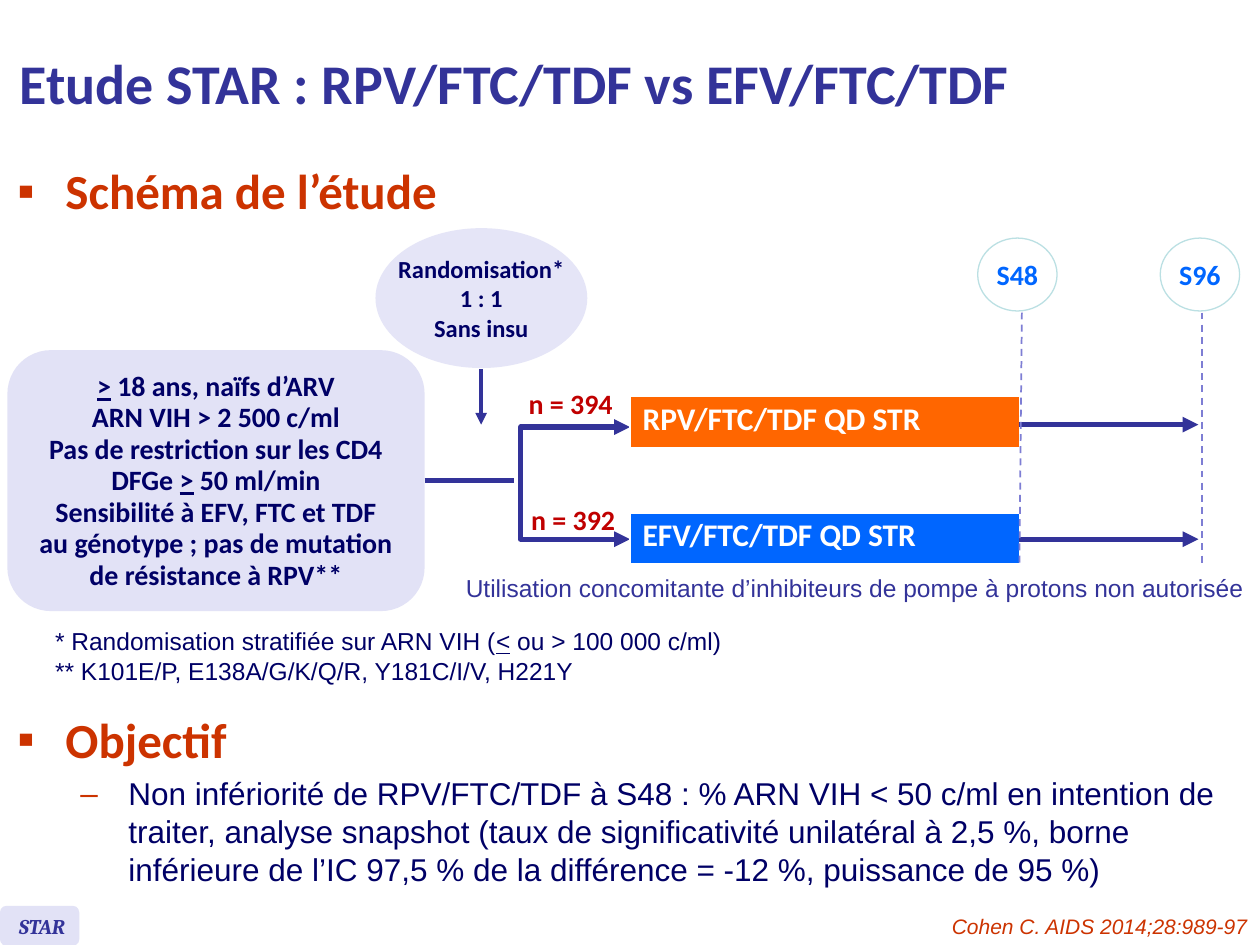
from lxml import etree
from pptx import Presentation
from pptx.dml.color import RGBColor
from pptx.enum.dml import MSO_LINE
from pptx.enum.shapes import MSO_CONNECTOR, MSO_SHAPE
from pptx.enum.text import MSO_ANCHOR, PP_ALIGN
from pptx.oxml.ns import qn
from pptx.util import Cm, Pt

INDIGO = RGBColor(0x33, 0x33, 0x99)
NAVY = RGBColor(0x00, 0x00, 0x66)
RUST = RGBColor(0xCC, 0x33, 0x00)
RED = RGBColor(0xC0, 0x00, 0x00)
ORANGE = RGBColor(0xFF, 0x66, 0x00)
BLUE = RGBColor(0x00, 0x66, 0xFF)
LAVENDER = RGBColor(0xE2, 0xE2, 0xF6)
PALE = RGBColor(0xE5, 0xE5, 0xF7)
VIOLET = RGBColor(0x7E, 0x7E, 0xD4)
AQUA = RGBColor(0xBB, 0xE0, 0xE3)
WHITE = RGBColor(0xFF, 0xFF, 0xFF)

TITLE = "Etude STAR : RPV/FTC/TDF vs EFV/FTC/TDF"
SCHEMA = "Schéma de l’étude"
GOAL = "Objectif"
GOAL_DETAIL = (
    "Non infériorité de RPV/FTC/TDF à S48 : % ARN VIH < 50 c/ml en intention de "
    "traiter, analyse snapshot (taux de significativité unilatéral à 2,5 %, borne "
    "inférieure de l’IC 97,5 % de la différence = -12 %, puissance de 95 %)"
)
RANDOMISATION = ["Randomisation*", "1 : 1", "Sans insu"]
# Text between two vertical bars is underlined.
CRITERIA = [
    "|>| 18 ans, naïfs d’ARV",
    "ARN VIH > 2 500 c/ml",
    "Pas de restriction sur les CD4",
    "DFGe |>| 50 ml/min",
    "Sensibilité à EFV, FTC et TDF",
    "au génotype ; pas de mutation",
    "de résistance à RPV**",
]
FOOTNOTES = [
    "* Randomisation stratifiée sur ARN VIH (|<| ou > 100 000 c/ml)",
    "** K101E/P, E138A/G/K/Q/R, Y181C/I/V, H221Y",
]
RESTRICTION = "Utilisation concomitante d’inhibiteurs de pompe à protons non autorisée"
CITATION = "Cohen C. AIDS 2014;28:989-97"
ARMS = [
    ("RPV/FTC/TDF QD STR", ORANGE, 7.98, 1.04, 0.8, "n = 394", 10.36, 7.67, 8.56),
    ("EFV/FTC/TDF QD STR", BLUE, 10.34, 1.02, 0.7, "n = 392", 10.41, 10.01, 10.87),
]
VISITS = [("S48", 19.71, 20.6, 20.55, 11.35), ("S96", 23.39, 24.23, 24.23, 11.43)]
ARM_LEFT, ARM_WIDTH, FORK_LEFT, ARROW_END = 12.7, 7.85, 10.5, 24.16


def style(para, size, color, face="Calibri", bold=False, italic=False):
    font = para.font
    font.size, font.name, font.bold, font.italic = Pt(size), face, bold, italic
    font.color.rgb = color


def write(frame, lines, size, color, align=PP_ALIGN.LEFT, anchor=MSO_ANCHOR.TOP,
          wrap=True, spacing=None, **look):
    frame.word_wrap = wrap
    frame.vertical_anchor = anchor
    for index, line in enumerate(lines):
        para = frame.add_paragraph() if index else frame.paragraphs[0]
        para.alignment = align
        if spacing:
            para.line_spacing = spacing
        for part, text in enumerate(line.split("|")):
            if text:
                span = para.add_run()
                span.text = text
                if part % 2:
                    span.font.underline = True
        style(para, size, color, **look)


def add_text(shapes, place, lines, size, color, **options):
    box = shapes.add_textbox(*map(Cm, place))
    write(box.text_frame, lines, size, color, **options)
    return box


def add_panel(shapes, kind, place, fill, outline=None):
    panel = shapes.add_shape(kind, *map(Cm, place))
    panel.shadow.inherit = False
    panel.fill.solid()
    panel.fill.fore_color.rgb = fill
    if outline:
        panel.line.color.rgb = outline
        panel.line.width = Pt(0.75)
    else:
        panel.line.fill.background()
    return panel


def add_arrowheads(line, *ends):
    for end in ends:
        etree.SubElement(line.line._get_or_add_ln(), qn(f"a:{end}"), type="triangle")


def add_line(shapes, start, end, width, color=INDIGO):
    line = shapes.add_connector(MSO_CONNECTOR.STRAIGHT, *map(Cm, (*start, *end)))
    line.line.color.rgb = color
    line.line.width = Pt(width)
    etree.SubElement(line._element.spPr, qn("a:effectLst"))
    return line


def add_bullet(para, mark, left):
    props = para._p.get_or_add_pPr()
    props.set("marL", str(Cm(left)))
    props.set("indent", str(-Cm(0.97)))
    color = etree.SubElement(props, qn("a:buClr"))
    etree.SubElement(color, qn("a:srgbClr"), val=str(RUST))
    etree.SubElement(props, qn("a:buFont"), typeface="Arial")
    etree.SubElement(props, qn("a:buChar"), char=mark)


def add_outline(shapes, place, heading, detail=None):
    frame = shapes.add_textbox(*map(Cm, place)).text_frame
    frame.word_wrap = True
    para = frame.paragraphs[0]
    para.text = heading
    add_bullet(para, "▪", 0.97)
    style(para, 28, RUST, bold=True)
    if detail:
        para = frame.add_paragraph()
        para.text = detail
        para.level = 1
        add_bullet(para, "–", 2.24)
        para.space_before = Pt(3.6)
        style(para, 18, NAVY, "Arial")


def add_arm(shapes, name, fill, top, height, spacing, count, count_left, count_top, arrow_y):
    place = map(Cm, (ARM_LEFT, top, ARM_WIDTH, height))
    table = shapes.add_table(1, 1, *place).table
    table.first_row = table.horz_banding = False
    cell = table.cell(0, 0)
    cell.fill.solid()
    cell.fill.fore_color.rgb = fill
    cell.vertical_anchor = MSO_ANCHOR.MIDDLE
    para = cell.text_frame.paragraphs[0]
    para.text = name
    para.line_spacing = spacing
    style(para, 18, WHITE, bold=True)
    add_text(shapes, (count_left, count_top, 2.29, 0.94), [count], 16, RED,
             align=PP_ALIGN.CENTER, wrap=False, bold=True)
    arrow = add_line(shapes, (ARM_LEFT + ARM_WIDTH, arrow_y), (ARROW_END, arrow_y), 3)
    add_arrowheads(arrow, "tailEnd")


def add_fork(shapes, top, bottom):
    builder = shapes.build_freeform(Cm(ARM_LEFT), Cm(top))
    corners = [(FORK_LEFT, top), (FORK_LEFT, bottom), (ARM_LEFT, bottom)]
    builder.add_line_segments([(Cm(x), Cm(y)) for x, y in corners], close=False)
    fork = builder.convert_to_shape()
    fork.shadow.inherit = False
    fork.fill.background()
    fork.line.color.rgb = INDIGO
    fork.line.width = Pt(3)
    add_arrowheads(fork, "headEnd", "tailEnd")


def main():
    deck = Presentation()
    deck.slide_width, deck.slide_height = Cm(25.4), Cm(19.05)
    page = deck.slides.add_slide(deck.slide_layouts[6])
    shapes = page.shapes
    centred = dict(align=PP_ALIGN.CENTER, anchor=MSO_ANCHOR.MIDDLE, bold=True)

    add_text(shapes, (0.15, 0.13, 24.26, 3.07), [TITLE], 32, INDIGO,
             anchor=MSO_ANCHOR.MIDDLE, bold=True)
    add_outline(shapes, (0.1, 3.12, 11.56, 1.6), SCHEMA)
    add_outline(shapes, (0.1, 14.17, 24.89, 4.01), GOAL, GOAL_DETAIL)

    draw = add_panel(shapes, MSO_SHAPE.OVAL, (7.57, 4.6, 4.27, 2.82), PALE)
    write(draw.text_frame, RANDOMISATION, 14, NAVY, wrap=False, **centred)
    add_arrowheads(add_line(shapes, (9.7, 7.44), (9.7, 8.56), 2.25), "tailEnd")

    criteria = add_panel(shapes, MSO_SHAPE.ROUNDED_RECTANGLE, (0.15, 7.06, 8.41, 5.26), LAVENDER)
    write(criteria.text_frame, CRITERIA, 16, NAVY, spacing=Pt(18), **centred)
    stem = add_line(shapes, (8.56, 9.69), (10.36, 9.69), 3)
    stem.begin_connect(criteria, 3)

    add_fork(shapes, 8.61, 10.87)
    for arm in ARMS:
        add_arm(shapes, *arm)

    for visit, left, line_top_x, line_end_x, line_end_y in VISITS:
        circle = add_panel(shapes, MSO_SHAPE.OVAL, (left, 4.8, 1.6, 1.47), WHITE, AQUA)
        write(circle.text_frame, [visit], 16, BLUE, wrap=False, **centred)
        marker = add_line(shapes, (line_top_x, 6.3), (line_end_x, line_end_y), 1, VIOLET)
        marker.line.dash_style = MSO_LINE.DASH

    add_text(shapes, (0.86, 12.5, 18.69, 1.85), FOOTNOTES, 14, NAVY, face="Arial")
    add_text(shapes, (9.14, 11.43, 16.31, 0.86), [RESTRICTION], 14, INDIGO,
             wrap=False, face="Arial")
    add_text(shapes, (17.78, 18.29, 7.62, 0.76), [CITATION], 12, RUST,
             align=PP_ALIGN.RIGHT, face="Arial", italic=True)

    badge = shapes.add_group_shape().shapes
    add_panel(badge, MSO_SHAPE.ROUNDED_RECTANGLE, (0, 18.26, 1.6, 0.81), LAVENDER)
    add_text(badge, (0.13, 18.29, 1.55, 0.76), ["STAR"], 12, INDIGO,
             face="Cambria", bold=True, italic=True)

    deck.save("out.pptx")


if __name__ == "__main__":
    main()
